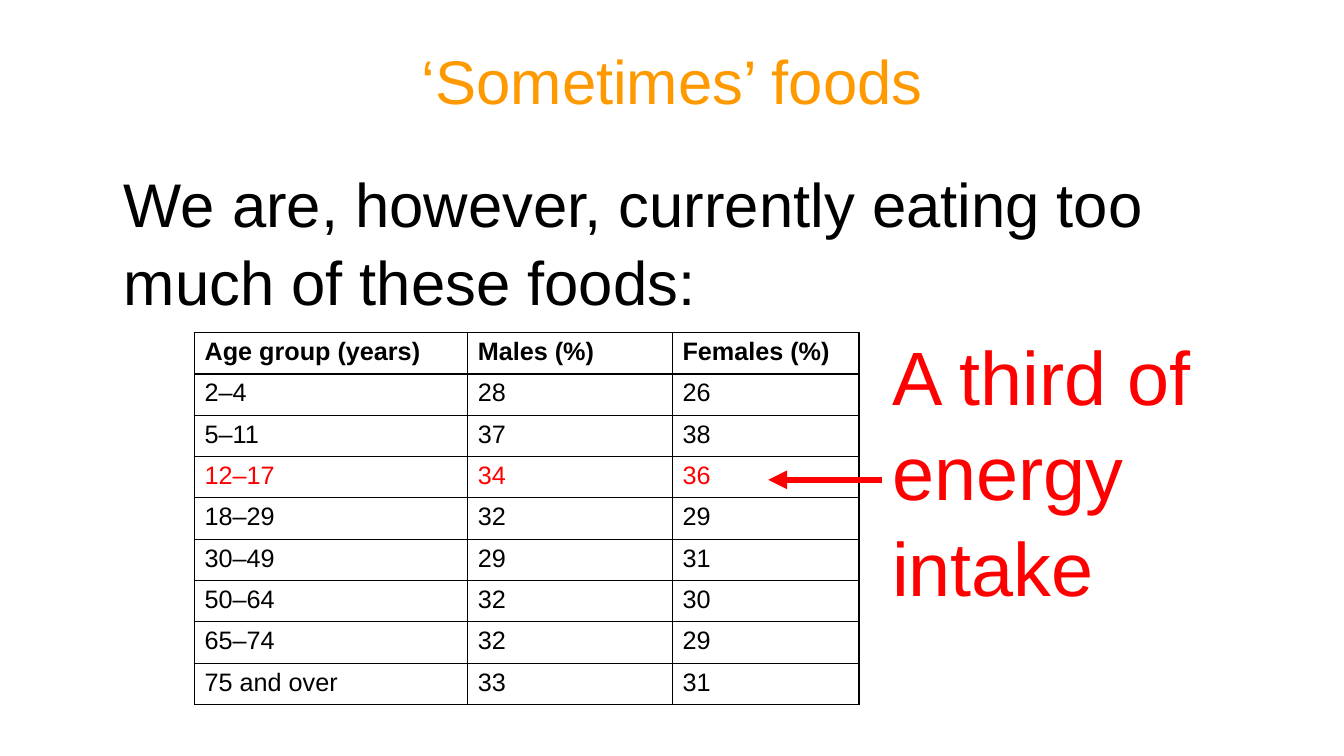
from pptx import Presentation
from pptx.dml.color import RGBColor
from pptx.enum.shapes import MSO_CONNECTOR
from pptx.enum.text import MSO_ANCHOR, PP_ALIGN
from pptx.oxml import parse_xml
from pptx.oxml.ns import nsdecls
from pptx.util import Inches, Pt


def tint(code):
    return RGBColor.from_string(code)


def node(tag, body=""):
    return parse_xml(f"<a:{tag} {nsdecls('a')}{body}")


class Page:
    """Holds the style and the current slide, and draws each kind of element."""

    def __init__(self, deck, face):
        self.slide = deck.slides.add_slide(deck.slide_layouts[6])
        self.face = face

    def style(self, para, color, **form):
        para.font.color.rgb = tint(color)
        for key, value in {"name": self.face, **form}.items():
            setattr(para.font, key, value)

    def text(self, words, box, size, color, gap=1.05, align=PP_ALIGN.LEFT, anchor=MSO_ANCHOR.TOP):
        frame = self.slide.shapes.add_textbox(*map(Inches, box)).text_frame
        for key, value in {"word_wrap": True, "vertical_anchor": anchor}.items():
            setattr(frame, key, value)
        para = frame.paragraphs[0]
        for key, value in {"text": words, "alignment": align, "line_spacing": gap}.items():
            setattr(para, key, value)
        self.style(para, color, size=Pt(size))

    def edge(self, cell):
        props = cell._tc.get_or_add_tcPr()
        for index, side in enumerate(("lnL", "lnR", "lnT", "lnB")):
            props.insert(index, node(side, ' w="12700"><a:solidFill><a:srgbClr val="000000"/>'
                                     f"</a:solidFill></a:{side}>"))

    def table(self, rows, left, top, widths, height, mark):
        box = (left, top, sum(widths), height * len(rows))
        grid = self.slide.shapes.add_table(len(rows), len(widths), *map(Inches, box)).table
        for col, width in zip(grid.columns, widths):
            col.width = Inches(width)
        for r, row in enumerate(rows):
            grid.rows[r].height = Inches(height)
            for c, value in enumerate(row):
                cell = grid.cell(r, c)
                cell.text = value
                cell.fill.background()
                self.edge(cell)
                self.style(cell.text_frame.paragraphs[0], "FF0000" if r == mark else "000000",
                           size=Pt(18), bold=r == 0)

    def arrow(self, start, end, color, width):
        line = self.slide.shapes.add_connector(MSO_CONNECTOR.STRAIGHT, *map(Inches, start + end))
        line.line.color.rgb = tint(color)
        line.line.width = Pt(width)
        line.line._get_or_add_ln().append(node("tailEnd", ' type="triangle"/>'))
        line._element.spPr.append(node("effectLst", "/>"))


def main():
    deck = Presentation()
    deck.slide_width, deck.slide_height = Inches(13.33), Inches(7.5)
    page = Page(deck, "Arial")
    page.text("‘Sometimes’ foods", (0.92, 0.11, 11.5, 1.45), 44, "FF9900",
              0.9, PP_ALIGN.CENTER, MSO_ANCHOR.MIDDLE)
    rows = [
        ("Age group (years)", "Males (%)", "Females (%)"),
        ("2–4", "28", "26"),
        ("5–11", "37", "38"),
        ("12–17", "34", "36"),
        ("18–29", "32", "29"),
        ("30–49", "29", "31"),
        ("50–64", "32", "30"),
        ("65–74", "32", "29"),
        ("75 and over", "33", "31"),
    ]
    page.table(rows, 1.93, 3.3, (2.71, 2.03, 1.85), 0.41, mark=3)
    page.text("We are, however, currently eating too much of these foods:",
              (1.13, 1.56, 11.5, 1.45), 44, "000000")
    page.text("A third of energy intake", (8.75, 3.18, 3.26, 2.83), 54, "FF0000")
    page.arrow((8.75, 4.76), (7.62, 4.76), "FF0000", 4.5)
    deck.save("out.pptx")


if __name__ == "__main__":
    main()
